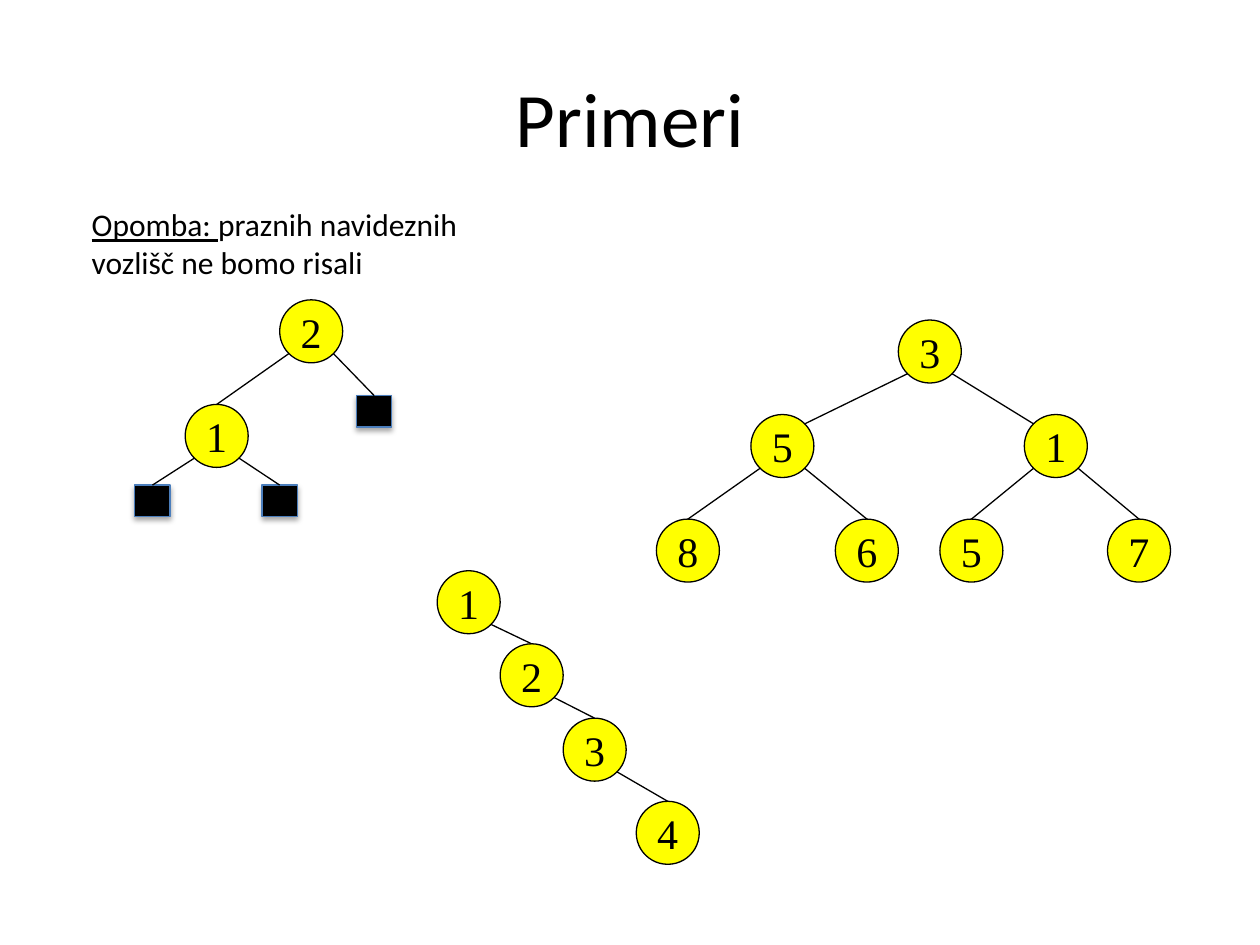
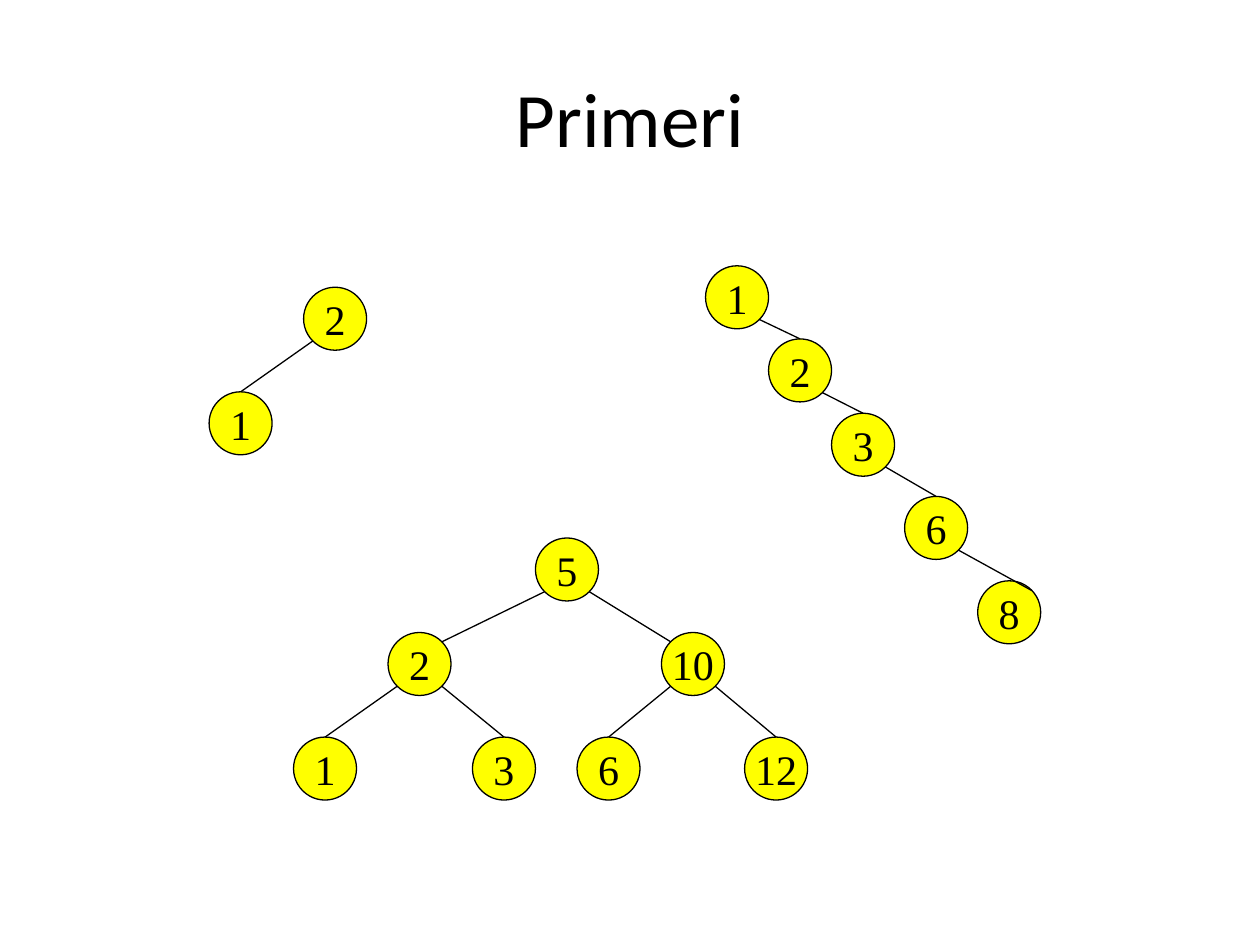
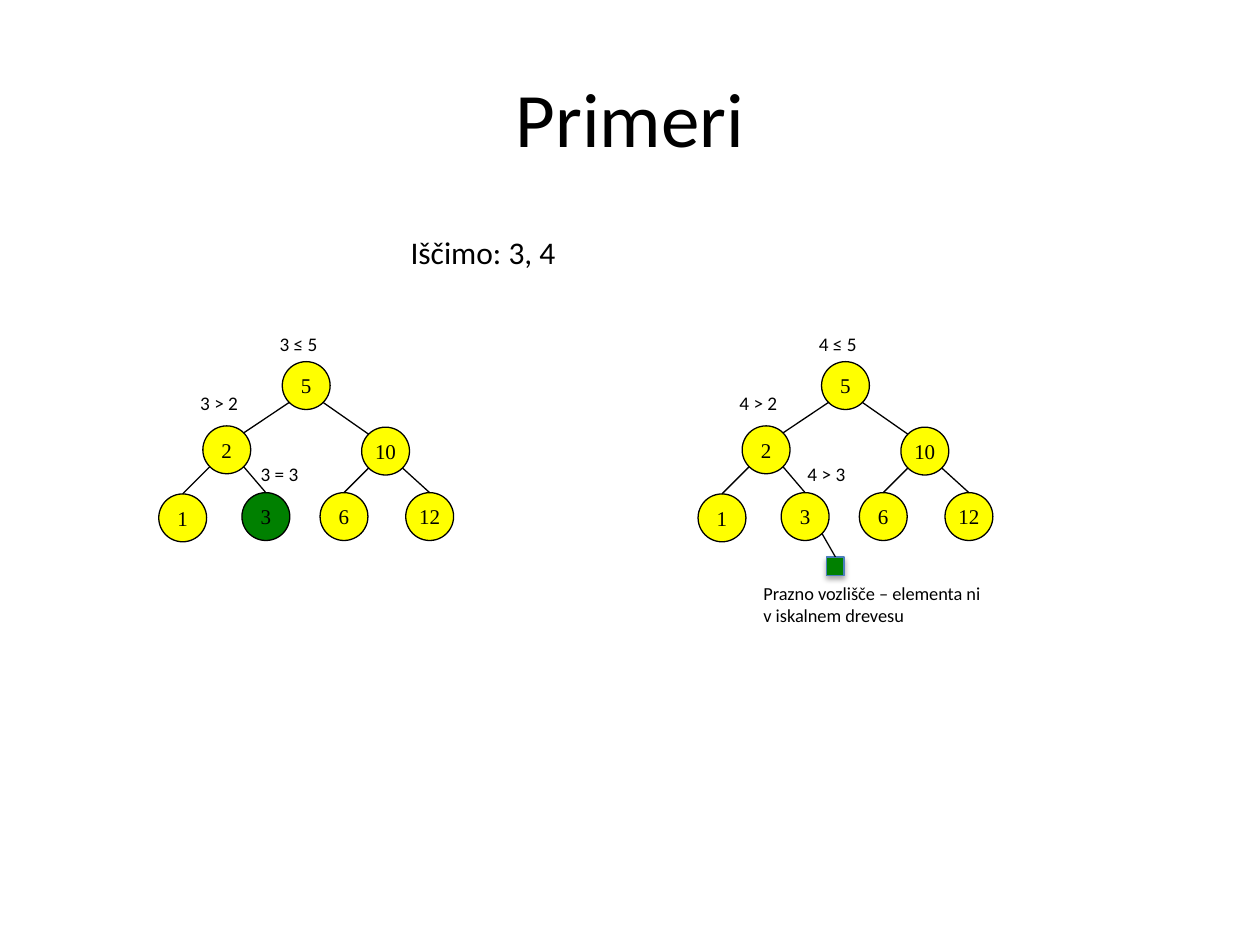
from collections import namedtuple

from lxml import etree
from pptx import Presentation
from pptx.dml.color import RGBColor
from pptx.enum.shapes import MSO_CONNECTOR, MSO_SHAPE
from pptx.enum.text import MSO_ANCHOR, MSO_AUTO_SIZE, PP_ALIGN
from pptx.oxml import parse_xml
from pptx.oxml.ns import nsdecls, qn
from pptx.util import Inches, Pt

BLACK = RGBColor(0x00, 0x00, 0x00)
YELLOW = RGBColor(0xFF, 0xFF, 0x00)
GREEN = RGBColor(0x00, 0x80, 0x00)
BLUE = RGBColor(0x4B, 0x7E, 0xBC)
TEXT_FONT, NODE_FONT = "Calibri", "Times New Roman"
COLS, ROWS = 100, 75

# Points of a circle at 45 degrees, as shares of its box
NEAR, FAR = 0.15, 0.85
UP_LEFT, UP_RIGHT = (NEAR, NEAR), (FAR, NEAR)
DOWN_LEFT, DOWN_RIGHT = (NEAR, FAR), (FAR, FAR)

# Offsets from the root, the parent of each node, and the edges that
# end at a corner of the child instead of its top
Form = namedtuple("Form", "offsets parents ends")
HEAP_PARENTS = [None, 0, 0, 1, 1, 2, 2]
INNER_ENDS = {1: UP_RIGHT, 2: UP_LEFT}
PAIR = Form([(0, 0), (-7.5, 8.3)], HEAP_PARENTS, {})
CHAIN = Form([(0, 0), (5, 5.8), (10, 11.7), (15.8, 18.3), (21.6, 25)],
             [None, 0, 1, 2, 3], {4: UP_RIGHT})
FULL = Form([(0, 0), (-11.7, 7.5), (10, 7.5), (-19.2, 15.8), (-5, 15.8),
             (3.3, 15.8), (16.6, 15.8)], HEAP_PARENTS, INNER_ENDS)
SMALL = Form([(0, 0), (-6.3, 5.1), (6.3, 5.2), (-9.8, 10.5), (-3.2, 10.4),
              (3, 10.4), (9.8, 10.4)], HEAP_PARENTS, INNER_ENDS)


class Deck:
    def __init__(self):
        self.prs = Presentation()
        self.prs.slide_width, self.prs.slide_height = Inches(10), Inches(7.5)
        self.col = self.prs.slide_width / COLS
        self.row = self.prs.slide_height / ROWS
        self.s = None

    def box(self, x, y, w, h):
        return (round(x * self.col), round(y * self.row),
                round(w * self.col), round(h * self.row))

    def run(self, p, text, size, font=TEXT_FONT, underline=None):
        r = p.add_run()
        r.text = text
        r.font.size, r.font.name = Pt(size), font
        r.font.color.rgb = BLACK
        r.font.underline = underline

    def slide(self, title):
        self.s = self.prs.slides.add_slide(self.prs.slide_layouts[5])
        sp = self.s.shapes.title
        sp.left, sp.top, sp.width, sp.height = self.box(5, 3, 90, 12.5)
        p = sp.text_frame.paragraphs[0]
        p.alignment = PP_ALIGN.CENTER
        self.run(p, title, 44)

    def text(self, x, y, w, h, size, *parts):
        """Add a text box; each part is a text and whether it is underlined."""
        tf = self.s.shapes.add_textbox(*self.box(x, y, w, h)).text_frame
        tf.word_wrap = True
        tf.auto_size = MSO_AUTO_SIZE.SHAPE_TO_FIT_TEXT
        for text, underline in parts:
            self.run(tf.paragraphs[0], text, size, underline=underline)

    def shape(self, kind, x, y, w, h, fill, line):
        sp = self.s.shapes.add_shape(kind, *self.box(x, y, w, h))
        sp.shadow.inherit = False
        sp.fill.solid()
        sp.fill.fore_color.rgb = fill
        sp.line.color.rgb = line
        sp.line.width = Pt(0.75)
        return sp

    def node(self, x, y, label, size, font_size, fill):
        sp = self.shape(MSO_SHAPE.OVAL, x, y, size, size, fill, BLACK)
        tf = sp.text_frame
        tf.word_wrap = False
        tf.vertical_anchor = MSO_ANCHOR.MIDDLE
        p = tf.paragraphs[0]
        p.alignment = PP_ALIGN.CENTER
        self.run(p, label, font_size, NODE_FONT)
        return sp

    def empty_node(self, parent, x, y, w, h, fill):
        sp = self.shape(MSO_SHAPE.RECTANGLE, x, y, w, h, fill, BLUE)
        sp._element.spPr.find(qn("a:effectLst")).append(parse_xml(
            f'<a:outerShdw {nsdecls("a")} blurRad="{Pt(3.1)}" dist="{Pt(1.8)}" '
            'dir="5400000" rotWithShape="0"><a:srgbClr val="000000">'
            '<a:alpha val="35000"/></a:srgbClr></a:outerShdw>'))
        self.edge(parent, sp)

    def edge(self, parent, child, end=None):
        """Join a lower corner of the parent to the child's top, or to end."""
        def point(sp, share):
            return (round(sp.left + share[0] * sp.width),
                    round(sp.top + share[1] * sp.height))

        start = DOWN_LEFT if child.left < parent.left else DOWN_RIGHT
        line = self.s.shapes.add_connector(
            MSO_CONNECTOR.STRAIGHT, *point(parent, start),
            *point(child, end or (0.5, 0)))
        if end is None:
            line.end_connect(child, 0)
        line.line.color.rgb = BLACK
        line.line.width = Pt(0.75)
        etree.SubElement(line._element.spPr, qn("a:effectLst"))

    def tree(self, form, x, y, labels, size=5, font_size=24, fills=None):
        """Draw a tree with its root at x, y and return its nodes."""
        fills = fills or {}
        nodes = [self.node(x + dx, y + dy, label, size, font_size,
                           fills.get(i, YELLOW))
                 for i, (label, (dx, dy)) in enumerate(zip(labels, form.offsets))]
        for i, child in enumerate(nodes[1:], 1):
            self.edge(nodes[form.parents[i]], child, form.ends.get(i))
        return nodes


def trees_slide(d):
    d.slide("Primeri")
    d.tree(CHAIN, 34.7, 45.3, "1234")
    d.tree(FULL, 71.3, 25.4, "3518657")
    d.text(6.3, 15.8, 33.4, 7.1, 18, ("Opomba: ", True),
           ("praznih navideznih vozlišč ne bomo risali", None))
    root, left = d.tree(PAIR, 22.2, 23.8, "21")
    for parent, x, y in [(root, 28.3, 31.4), (left, 10.7, 38.5), (left, 20.8, 38.5)]:
        d.empty_node(parent, x, y, 2.8, 2.5, BLACK)


def search_trees_slide(d):
    d.slide("Primeri")
    d.tree(CHAIN, 56, 21.1, "12368")
    d.tree(FULL, 42.5, 42.7, ["5", "2", "10", "1", "3", "6", "12"])
    d.tree(PAIR, 24.1, 22.8, "21")


def search_slide(d):
    d.slide("Primeri")
    d.text(31.6, 18, 24.2, 4, 18, ("Iščimo: 3, 4", None))
    y = 28.7
    searches = [(22.4, ("3 ≤ 5", "3 > 2", "3 = 3"), -2.7, {4: GREEN}),
                (65.2, ("4 ≤ 5", "4 > 2", "4 > 3"), -2.1, {})]
    for x, steps, last_dx, fills in searches:
        nodes = d.tree(SMALL, x, y, ["5", "2", "10", "1", "3", "6", "12"],
                       3.8, 12, fills)
        for step, (dx, dy) in zip(steps, [(-1.2, -2.8), (-7.5, 1.9), (last_dx, 7.5)]):
            d.text(x + dx, y + dy, 7.9, 2.9, 11, (step, None))
    d.empty_node(nodes[4], 65.6, 44.2, 1.4, 1.5, GREEN)
    d.text(59.6, 45.7, 19.5, 4.5, 10.5,
           ("Prazno vozlišče – elementa ni v iskalnem drevesu", None))


def main():
    d = Deck()
    trees_slide(d)
    search_trees_slide(d)
    search_slide(d)
    d.prs.save("out.pptx")


if __name__ == "__main__":
    main()
